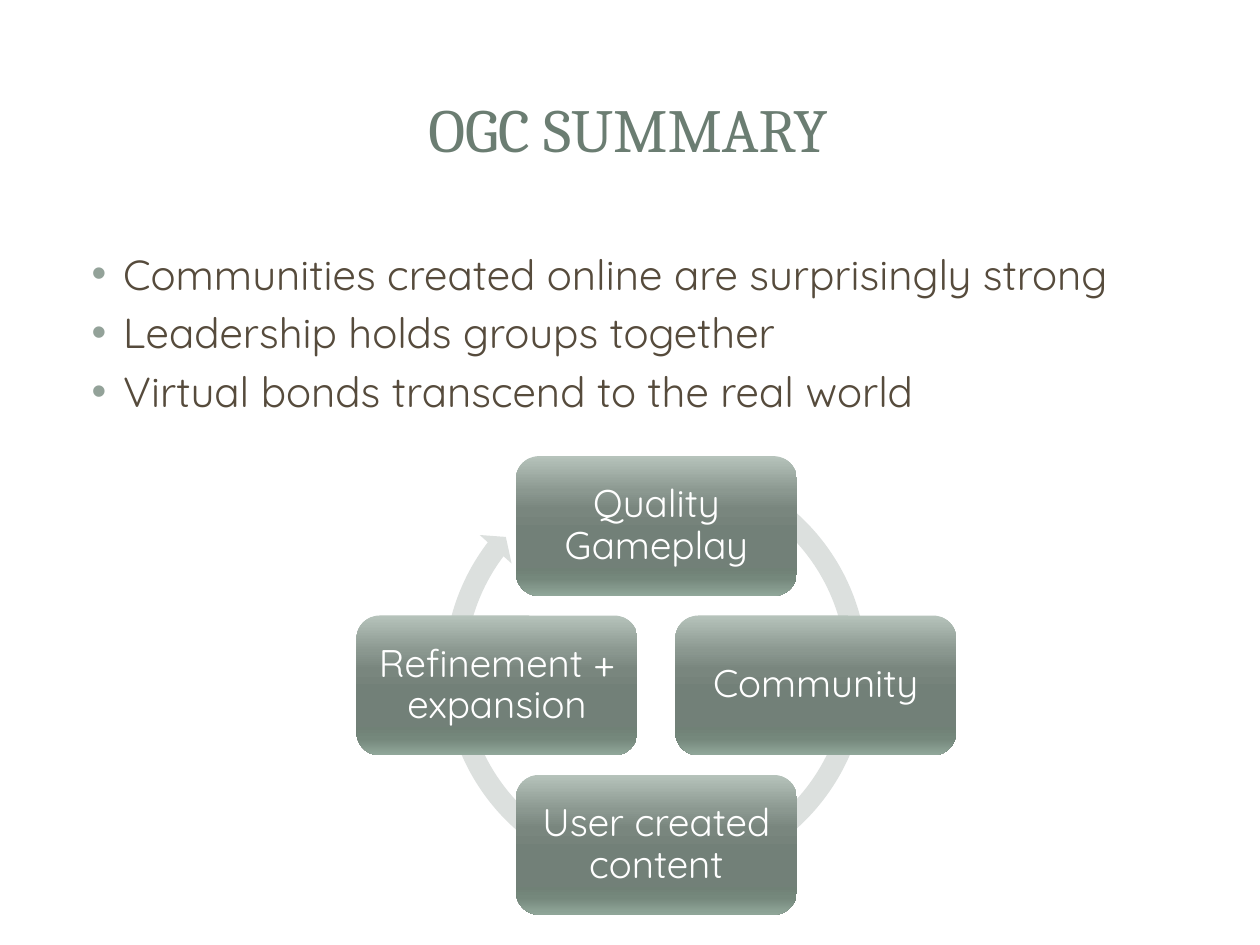
from lxml import etree
from pptx import Presentation
from pptx.dml.color import RGBColor
from pptx.enum.shapes import MSO_SHAPE
from pptx.enum.text import MSO_ANCHOR, PP_ALIGN
from pptx.oxml.ns import qn
from pptx.util import Inches, Pt

COLORS = {"title": "6B7D72", "body": "564B3C", "bullet": "93A299",
          "ring": "DCE0DE", "label": "FFFFFF"}
GRADIENT = [(0, "B6C3BB"), (25, "8B9890"), (38, "79867E"), (55, "728078"),
            (80, "708176"), (88, "75887C"), (100, "91A79A")]


def add_text(p, text, font, size, color):
    r = p.add_run()
    r.text = text
    r.font.name = font
    r.font.size = Pt(size)
    r.font.color.rgb = RGBColor.from_string(COLORS[color])


def set_gradient(s):
    s.fill.gradient()
    s.fill.gradient_angle = 270  # counter-clockwise, so top to bottom
    stops = s._element.spPr.find(qn("a:gradFill")).find(qn("a:gsLst"))
    for old in list(stops):
        stops.remove(old)
    for pos, color in GRADIENT:
        gs = etree.SubElement(stops, qn("a:gs"), pos=str(pos * 1000))
        etree.SubElement(gs, qn("a:srgbClr"), val=color)


prs = Presentation()
prs.slide_width, prs.slide_height = Inches(10), Inches(7.5)
slide = prs.slides.add_slide(prs.slide_layouts[6])

# Title
s = slide.shapes.add_textbox(Inches(0.47), Inches(0.45), Inches(9.03), Inches(1.14))
tf = s.text_frame
tf.word_wrap = True
tf.vertical_anchor = MSO_ANCHOR.MIDDLE
p = tf.paragraphs[0]
p.alignment = PP_ALIGN.CENTER
add_text(p, "OGC SUMMARY", "Cambria", 35, "title")

# Bullet list
s = slide.shapes.add_textbox(Inches(0.5), Inches(1.92), Inches(9), Inches(5.35))
tf = s.text_frame
tf.word_wrap = True
points = ["Communities created online are surprisingly strong",
          "Leadership holds groups together",
          "Virtual bonds transcend to the real world"]
for i, text in enumerate(points):
    p = tf.paragraphs[0] if i == 0 else tf.add_paragraph()
    p.space_before = Pt(4.8)
    pPr = p._p.get_or_add_pPr()
    pPr.set("marL", str(Inches(0.38)))
    pPr.set("indent", str(Inches(-0.25)))
    bu = etree.SubElement(pPr, qn("a:buClr"))
    etree.SubElement(bu, qn("a:srgbClr"), val=COLORS["bullet"])
    etree.SubElement(pPr, qn("a:buFont"), typeface="Arial")
    etree.SubElement(pPr, qn("a:buChar"), char="•")
    add_text(p, text, "Quicksand", 24, "body")

# Cycle arrow
s = slide.shapes.add_shape(MSO_SHAPE.CIRCULAR_ARROW, Inches(3.44), Inches(3.56),
                           Inches(3.53), Inches(3.53))
for i, value in enumerate([0.047, 2.729, 130.332, 178.948, 0.048]):
    s.adjustments[i] = value
s.fill.solid()
s.fill.fore_color.rgb = RGBColor.from_string(COLORS["ring"])
s.line.fill.background()
s.shadow.inherit = False

# Cycle steps, clockwise from the top around a common centre
center_x, center_y, radius = 5.21, 5.44, 1.265
box_w, box_h = 2.23, 1.11
steps = [("Quality Gameplay", 0, -1), ("Community", 1, 0),
         ("User created content", 0, 1), ("Refinement + expansion", -1, 0)]
for text, dx, dy in steps:
    s = slide.shapes.add_shape(
        MSO_SHAPE.ROUNDED_RECTANGLE,
        Inches(center_x + dx * radius - box_w / 2),
        Inches(center_y + dy * radius - box_h / 2),
        Inches(box_w), Inches(box_h))
    set_gradient(s)
    s.line.fill.background()
    s.shadow.inherit = False
    tf = s.text_frame
    tf.word_wrap = True
    tf.vertical_anchor = MSO_ANCHOR.MIDDLE
    tf.margin_left = tf.margin_right = Inches(0.1)
    tf.margin_top = tf.margin_bottom = Inches(0.1)
    p = tf.paragraphs[0]
    p.alignment = PP_ALIGN.CENTER
    p.line_spacing = 0.9
    add_text(p, text, "Quicksand", 22, "label")

prs.save("out.pptx")
